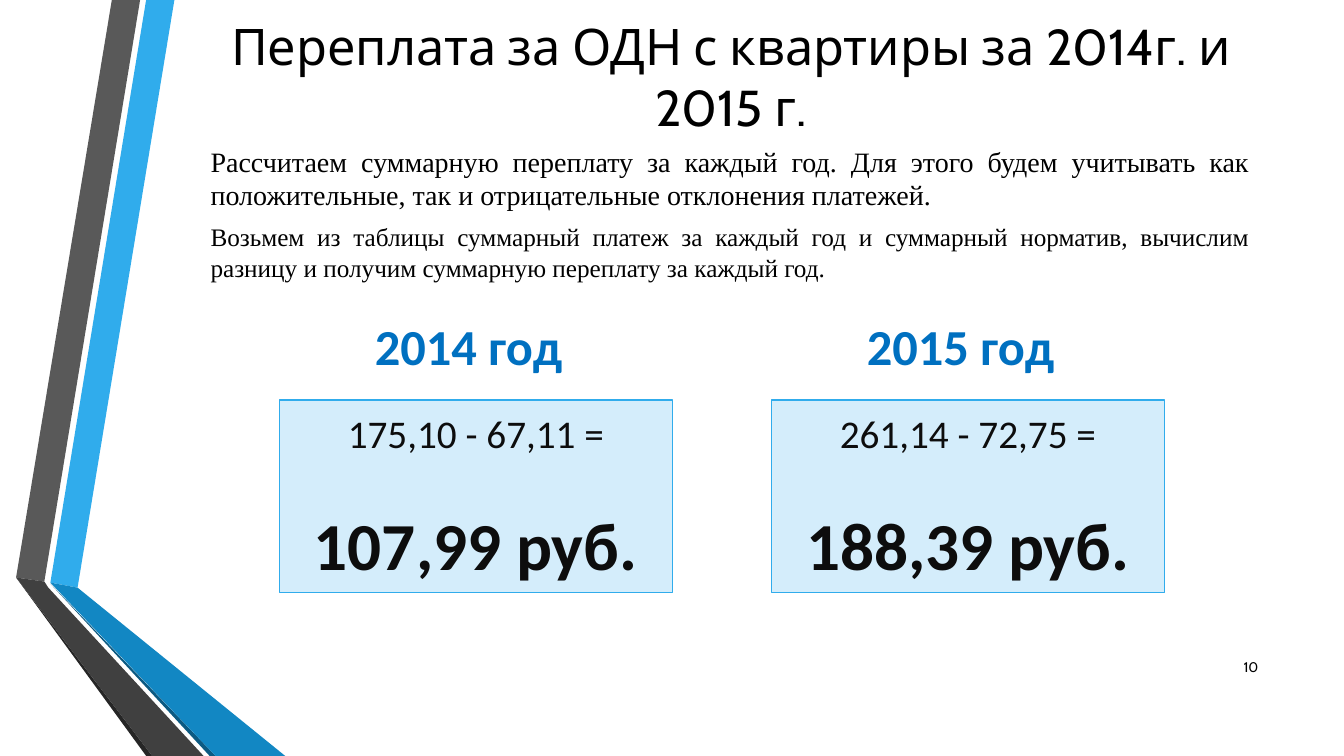
from lxml import etree
from pptx import Presentation
from pptx import util as u
from pptx.dml.color import RGBColor
from pptx.enum import shapes, text
from pptx.oxml.ns import qn

PX = u.Inches(1) // 100
SLIDE = (1333, 750)

BLACK = RGBColor(0x00, 0x00, 0x00)
INK = RGBColor(0x0D, 0x0D, 0x0D)
HEADING = RGBColor(0x00, 0x70, 0xC0)
SKY = RGBColor(0x30, 0xAC, 0xEC)
PALE = RGBColor(0x83, 0xCD, 0xF4)
OCEAN = RGBColor(0x12, 0x87, 0xC3)
DEEP = RGBColor(0x0C, 0x5A, 0x82)
GREY = RGBColor(0x59, 0x59, 0x59)
COAL = RGBColor(0x40, 0x40, 0x40)
SOOT = RGBColor(0x26, 0x26, 0x26)

RIBBONS = [
    (SKY, [(50, 578), (77, 583), (173, 0), (145, 0)]),
    (GREY, [(139, 0), (111, 0), (16, 573), (44, 577)]),
    (SOOT, [(16, 573), (145, 750), (151, 750)]),
    (DEEP, [(50, 579), (208, 750), (214, 750)]),
    (OCEAN, [(50, 578), (214, 750), (283, 750), (77, 583)]),
    (COAL, [(16, 573), (151, 750), (202, 750), (48, 583), (44, 577)]),
]

TITLE = "Переплата за ОДН с квартиры за 2014г. и 2015 г."
EXPLANATIONS = [
    ("Рассчитаем суммарную переплату за каждый год. Для этого будем учитывать "
     "как положительные, так и отрицательные отклонения платежей.", 138, 77, 20),
    ("Возьмем из таблицы суммарный платеж за каждый год и суммарный норматив, "
     "вычислим разницу и получим суммарную переплату за каждый год.", 215, 71, 18),
]
YEARS = [
    ("2014 год", "175,10 - 67,11 =", "107,99 руб."),
    ("2015 год", "261,14 - 72,75 =", "188,39 руб."),
]
PAGE_NUMBER = "10"

YEAR_LEFT, YEAR_STEP = 277, 488
LABEL_INDENT = 85


def scaled(*lengths):
    return [length * PX for length in lengths]


def style(para, size, face, color, align, bold=False):
    para.alignment = align
    para.font.size = u.Pt(size)
    para.font.name = face
    para.font.color.rgb = color
    para.font.bold = bold


def add_text(page, words, place, size, face, color, align,
             anchor=text.MSO_ANCHOR.MIDDLE, bold=False):
    frame = page.shapes.add_textbox(*scaled(*place)).text_frame
    frame.word_wrap = True
    frame.vertical_anchor = anchor
    para = frame.paragraphs[0]
    para.text = words
    style(para, size, face, color, align, bold)


def add_ribbon(page, color, points):
    builder = page.shapes.build_freeform(*points[0], scale=PX)
    builder.add_line_segments(points[1:], close=True)
    ribbon = builder.convert_to_shape()
    ribbon.shadow.inherit = False
    ribbon.fill.solid()
    ribbon.fill.fore_color.rgb = color
    ribbon.line.fill.background()


def add_result(page, left, formula, total):
    box = page.shapes.add_shape(shapes.MSO_SHAPE.RECTANGLE,
                                *scaled(left, 397, 390, 191))
    box.shadow.inherit = False
    box.fill.solid()
    box.fill.fore_color.rgb = PALE
    color = box.fill._xPr.find(qn("a:solidFill"))[0]
    etree.SubElement(color, qn("a:alpha")).set("val", "34000")
    box.line.color.rgb = SKY
    box.line.width = u.Pt(1)
    frame = box.text_frame
    frame.word_wrap = True
    frame.vertical_anchor = text.MSO_ANCHOR.MIDDLE
    first = frame.paragraphs[0]
    first.text = formula
    style(first, 28, "Calibri", INK, text.PP_ALIGN.CENTER)
    second = frame.add_paragraph()
    second.text = total
    second.space_before = u.Pt(34)
    style(second, 48, "Calibri", INK, text.PP_ALIGN.CENTER, bold=True)


def main():
    deck = Presentation()
    deck.slide_width, deck.slide_height = scaled(*SLIDE)
    page = deck.slides.add_slide(deck.slide_layouts[6])

    for color, points in RIBBONS:
        add_ribbon(page, color, points)

    add_text(page, TITLE, (177, 24, 1096, 102), 36, "Cabin", BLACK,
             text.PP_ALIGN.CENTER)
    for words, top, height, size in EXPLANATIONS:
        add_text(page, words, (199, top, 1050, height), size,
                 "Times New Roman", BLACK, text.PP_ALIGN.JUSTIFY,
                 text.MSO_ANCHOR.TOP)

    for index, (year, formula, total) in enumerate(YEARS):
        left = YEAR_LEFT + index * YEAR_STEP
        add_text(page, year, (left + LABEL_INDENT, 314, 220, 57), 36,
                 "Calibri", HEADING, text.PP_ALIGN.LEFT, bold=True)
        add_result(page, left, formula, total)

    add_text(page, PAGE_NUMBER, (1198, 642, 60, 40), 10, "Cabin", BLACK,
             text.PP_ALIGN.RIGHT)
    deck.save("out.pptx")


if __name__ == "__main__":
    main()
